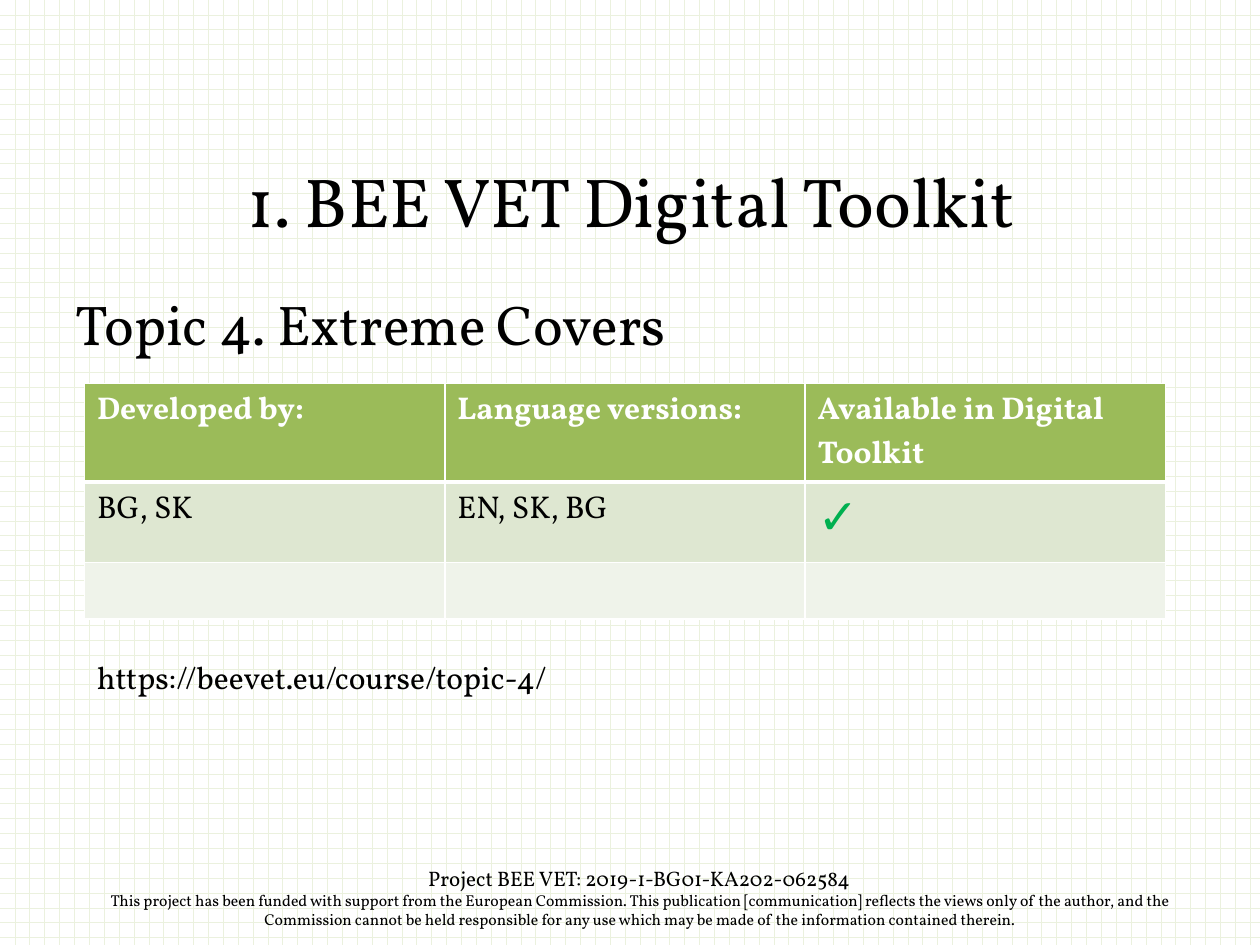
"""Build the BEE VET toolkit slide for topic 4."""
from dataclasses import dataclass

from lxml import etree
from pptx import Presentation
from pptx import util as u
from pptx.dml.color import RGBColor
from pptx.enum import dml, text
from pptx.oxml.ns import qn

FONT = "Vollkorn"
BLACK, WHITE = "000000", "FFFFFF"
WIDTH, HEIGHT = u.Inches(10), u.Inches(7.5)


@dataclass
class Line:
    """A paragraph with its look."""
    words: str
    size: float
    color: str = BLACK
    bold: bool = False


@dataclass
class Block:
    """A text box placed in percent of the slide."""
    x: float
    y: float
    w: float
    h: float
    lines: list[Line]
    align: text.PP_ALIGN = text.PP_ALIGN.LEFT
    anchor: text.MSO_ANCHOR = text.MSO_ANCHOR.TOP
    wrap: bool = True


@dataclass
class Row:
    """A table row with its height in percent of the slide."""
    height: float
    fill: str
    rule: float
    cells: list[Line]


def across(share: float) -> int:
    """Turn a percentage of the slide width into a length."""
    return int(WIDTH * share / 100)


def down(share: float) -> int:
    """Turn a percentage of the slide height into a length."""
    return int(HEIGHT * share / 100)


def paint(color_format, color: str) -> None:
    """Apply a hex colour."""
    color_format.rgb = RGBColor.from_string(color)


def write(p, line: Line) -> None:
    """Set the words and the look of a paragraph."""
    p.text = line.words
    for r in p.runs:
        r.font.name, r.font.size, r.font.bold = FONT, u.Pt(line.size), line.bold
        paint(r.font.color, line.color)


def add_block(slide, block: Block) -> None:
    """Draw a text box."""
    sp = slide.shapes.add_textbox(across(block.x), down(block.y), across(block.w), down(block.h))
    tf = sp.text_frame
    tf.word_wrap, tf.vertical_anchor = block.wrap, block.anchor
    for i, line in enumerate(block.lines):
        p = tf.add_paragraph() if i else tf.paragraphs[0]
        p.alignment = block.align
        write(p, line)


def add_borders(cell, bottom: float) -> None:
    """Give a cell white borders with its own bottom width."""
    tc_pr = cell._tc.get_or_add_tcPr()
    for i, (side, width) in enumerate({"L": 1, "R": 1, "T": 1, "B": bottom}.items()):
        ln = etree.Element(qn(f"a:ln{side}"), w=str(u.Pt(width)))
        fill = etree.SubElement(ln, qn("a:solidFill"))
        etree.SubElement(fill, qn("a:srgbClr"), val=WHITE)
        tc_pr.insert(i, ln)


def add_grid(slide, x: float, y: float, w: float, rows: list[Row]) -> None:
    """Draw a table with equal columns."""
    height = down(sum(row.height for row in rows))
    table = slide.shapes.add_table(
        len(rows), len(rows[0].cells), across(x), down(y), across(w), height).table
    for i, row in enumerate(rows):
        table.rows[i].height = down(row.height)
        for cell, line in zip(table.rows[i].cells, row.cells):
            cell.fill.solid()
            paint(cell.fill.fore_color, row.fill)
            add_borders(cell, row.rule)
            write(cell.text_frame.paragraphs[0], line)


def main() -> None:
    """Build and save the slide."""
    prs = Presentation()
    prs.slide_width, prs.slide_height = WIDTH, HEIGHT
    slide = prs.slides.add_slide(prs.slide_layouts[6])
    fill = slide.background.fill
    fill.patterned()
    fill.pattern = dml.MSO_PATTERN.HORIZONTAL_BRICK
    paint(fill.fore_color, "EBF1DE")
    paint(fill.back_color, WHITE)

    center, middle = text.PP_ALIGN.CENTER, text.MSO_ANCHOR.MIDDLE
    blocks = [
        Block(5.1, 90.93, 91.3, 8.13, [
            Line("Project BEE VET: 2019-1-BG01-KA202-062584", 12),
            Line("This project has been funded with support from the European Commission. "
                 "This publication [communication] reflects the views only of the author, "
                 "and the Commission cannot be held responsible for any use which may be "
                 "made of the information contained therein.", 9),
        ], center),
        Block(5.1, 16.4, 90, 9.47, [Line("1. BEE VET Digital Toolkit", 39.6)], center, middle),
        Block(5, 30, 90, 59.33, [Line("Topic 4. Extreme Covers", 32)]),
        Block(6.7, 68.93, 41.6, 5.33, [Line("https://beevet.eu/course/topic-4/", 18)], wrap=False),
    ]
    for block in blocks:
        add_block(slide, block)

    heads = ["Developed by:", "Language versions:", "Available in Digital Toolkit"]
    add_grid(slide, 6.7, 40.6, 85.8, [
        Row(10.4, "9BBB59", 3, [Line(head, 18, WHITE, True) for head in heads]),
        Row(8.53, "DEE7D1", 1, [Line("BG, SK", 18), Line("EN, SK, BG", 18),
                                Line("✓", 28, "00B050")]),
        Row(6, "EFF3EA", 1, [Line("", 18)] * len(heads)),
    ])
    prs.save("out.pptx")


if __name__ == "__main__":
    main()
